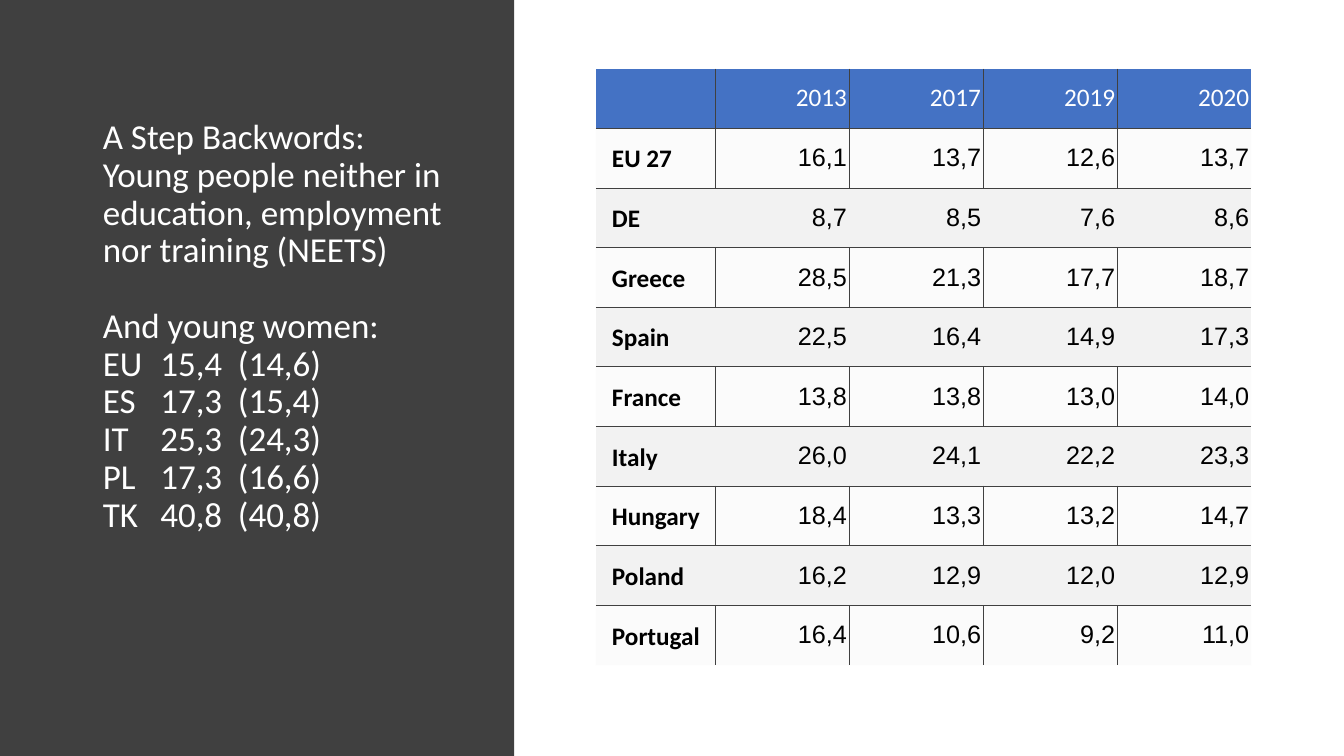
from lxml import etree
from pptx import Presentation
from pptx.dml.color import RGBColor
from pptx.enum.shapes import MSO_SHAPE
from pptx.enum.text import MSO_ANCHOR, MSO_AUTO_SIZE, PP_ALIGN
from pptx.oxml.ns import qn
from pptx.util import Inches, Pt

RECTANGLE = MSO_SHAPE.RECTANGLE
MIDDLE, BOTTOM = MSO_ANCHOR.MIDDLE, MSO_ANCHOR.BOTTOM
LEFT, RIGHT = PP_ALIGN.LEFT, PP_ALIGN.RIGHT
NO_AUTOFIT = MSO_AUTO_SIZE.NONE

DARK, WHITE, BLACK = "404040", "FFFFFF", "000000"
HEADER_BLUE, BAND_GRAY = "4472C4", "F2F2F2"
PLAIN_TABLE_STYLE = "{2D5ABB26-0587-4C30-8999-92F81FD0307C}"

TITLE_LINES = [
    "A Step Backwords:",
    "Young people neither in education, employment nor training (NEETS)",
    "And young women:",
    "EU\t15,4\t(14,6)",
    "ES\t17,3\t(15,4)",
    "IT\t25,3\t(24,3)",
    "PL\t17,3\t(16,6)",
    "TK\t40,8\t(40,8)",
]
NEETS_ROWS = [
    ["", "2013", "2017", "2019", "2020"],
    ["EU 27", "16,1", "13,7", "12,6", "13,7"],
    ["DE", "8,7", "8,5", "7,6", "8,6"],
    ["Greece", "28,5", "21,3", "17,7", "18,7"],
    ["Spain", "22,5", "16,4", "14,9", "17,3"],
    ["France", "13,8", "13,8", "13,0", "14,0"],
    ["Italy", "26,0", "24,1", "22,2", "23,3"],
    ["Hungary", "18,4", "13,3", "13,2", "14,7"],
    ["Poland", "16,2", "12,9", "12,0", "12,9"],
    ["Portugal", "16,4", "10,6", "9,2", "11,0"],
]


def add_run(paragraph, text, size, font_name, color, bold=False):
    run = paragraph.add_run()
    run.text = text
    run.font.size = Pt(size)
    run.font.name = font_name
    run.font.bold = bold
    run.font.color.rgb = RGBColor.from_string(color)


def set_borders(cell, sides):
    """Draw thin dark borders on the given sides, in the order L, R, T, B."""
    properties = cell._tc.get_or_add_tcPr()
    for position, side in enumerate(sides):
        line = etree.Element(qn(f"a:ln{side}"), w=str(Pt(0.5)))
        fill = etree.SubElement(line, qn("a:solidFill"))
        etree.SubElement(fill, qn("a:srgbClr"), val=DARK)
        properties.insert(position, line)


presentation = Presentation()
presentation.slide_width = Inches(13.33)
presentation.slide_height = Inches(7.5)
slide = presentation.slides.add_slide(presentation.slide_layouts[5])

# Dark panel, placed behind the title
panel = slide.shapes.add_shape(RECTANGLE, 0, 0, Inches(5.1), Inches(7.5))
panel.shadow.inherit = False
panel.fill.solid()
panel.fill.fore_color.rgb = RGBColor.from_string(DARK)
panel.line.fill.background()
title = slide.shapes.title
title._element.addprevious(panel._element)

# Title text
title.left, title.top = Inches(0.92), Inches(0.68)
title.width, title.height = Inches(3.67), Inches(5.92)
title_frame = title.text_frame
title_frame.word_wrap = True
title_frame.auto_size = NO_AUTOFIT
title_frame.vertical_anchor = MIDDLE
title_frame.margin_bottom = Inches(0.84)
for index, text in enumerate(TITLE_LINES):
    paragraph = title_frame.paragraphs[0] if index == 0 else title_frame.add_paragraph()
    paragraph.alignment = LEFT
    paragraph.line_spacing = 0.9
    paragraph.space_before = Pt(27 if text == "And young women:" else 0)
    columns = text.split("\t")
    if len(columns) > 1:
        tab_list = etree.SubElement(paragraph._p.get_or_add_pPr(), qn("a:tabLst"))
        for position in (0.57, 1.34):
            etree.SubElement(tab_list, qn("a:tab"), pos=str(Inches(position)), algn="l")
    add_run(paragraph, text, 25, "Calibri", WHITE)

# Table of rates by country and year
row_count, column_count = len(NEETS_ROWS), len(NEETS_ROWS[0])
table_frame = slide.shapes.add_table(
    row_count, column_count, Inches(5.91), Inches(0.68), Inches(6.49), Inches(5.92))
table = table_frame.table
table.horz_banding = False
table._tbl.tblPr.find(qn("a:tableStyleId")).text = PLAIN_TABLE_STYLE
for column_index, column in enumerate(table.columns):
    column.width = Inches(1.18 if column_index == 0 else 1.33)

for row_index, values in enumerate(NEETS_ROWS):
    table.rows[row_index].height = Inches(5.92 / row_count)
    is_header = row_index == 0
    is_light = row_index % 2 == 1
    for column_index, value in enumerate(values):
        cell = table.cell(row_index, column_index)
        is_label = column_index == 0
        cell.margin_left, cell.margin_right = Inches(0.16), Inches(0.02)
        cell.margin_top = cell.margin_bottom = Inches(0.13)
        cell.vertical_anchor = BOTTOM if is_label else MIDDLE
        cell.fill.solid()
        cell.fill.fore_color.rgb = RGBColor.from_string(HEADER_BLUE if is_header else BAND_GRAY)
        if is_light:
            color_element = cell._tc.tcPr.find(qn("a:solidFill")).find(qn("a:srgbClr"))
            etree.SubElement(color_element, qn("a:alpha"), val="30000")

        sides = []
        if is_header or is_light:
            if not is_label:
                sides.append("L")
            if column_index < column_count - 1:
                sides.append("R")
        sides.append("T" if is_light else "B")
        set_borders(cell, sides)

        if value:
            paragraph = cell.text_frame.paragraphs[0]
            paragraph.alignment = LEFT if is_label else RIGHT
            font_name = "Calibri" if is_header or is_label else "Arial"
            add_run(paragraph, value, 18, font_name, WHITE if is_header else BLACK, is_label)

presentation.save("out.pptx")
